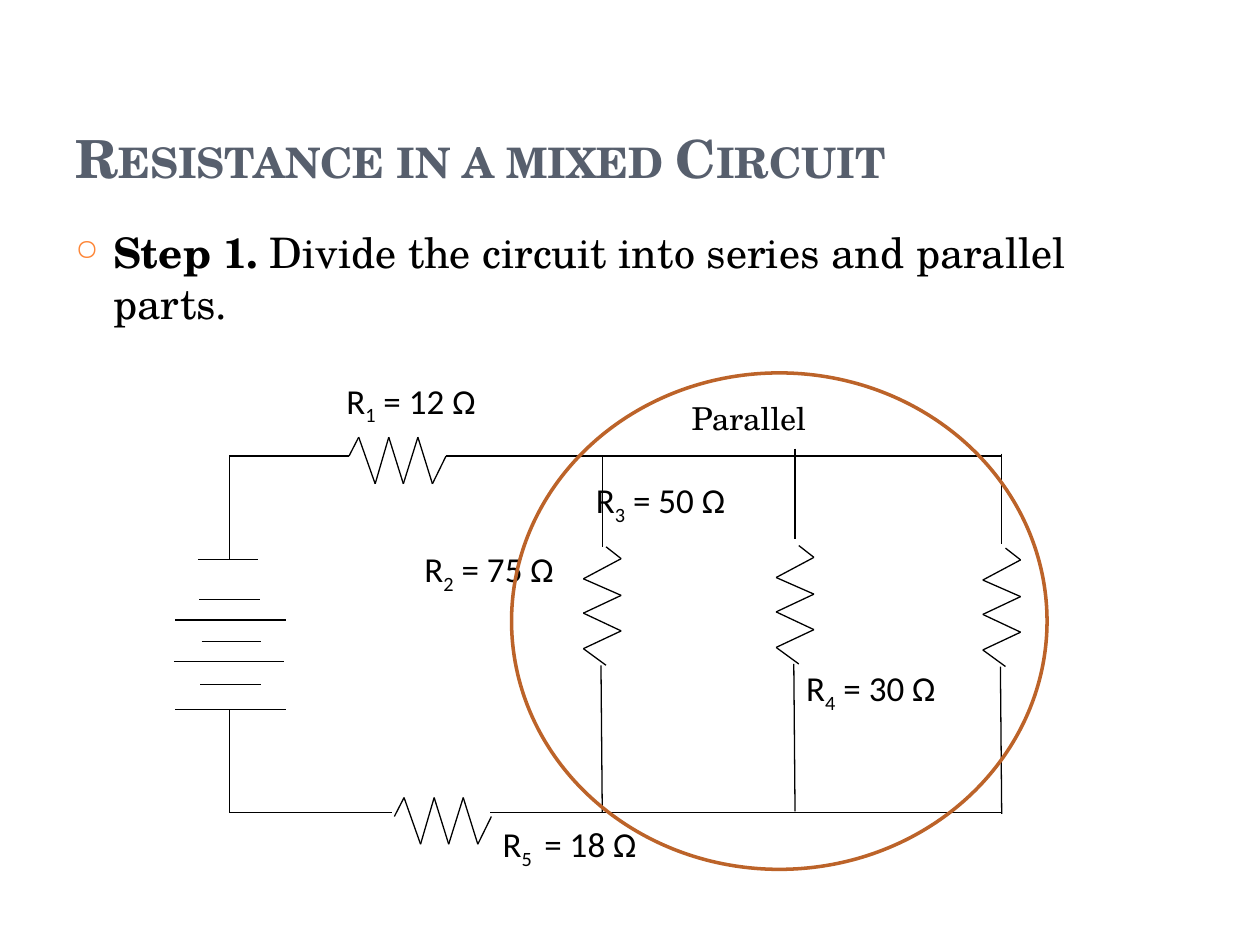
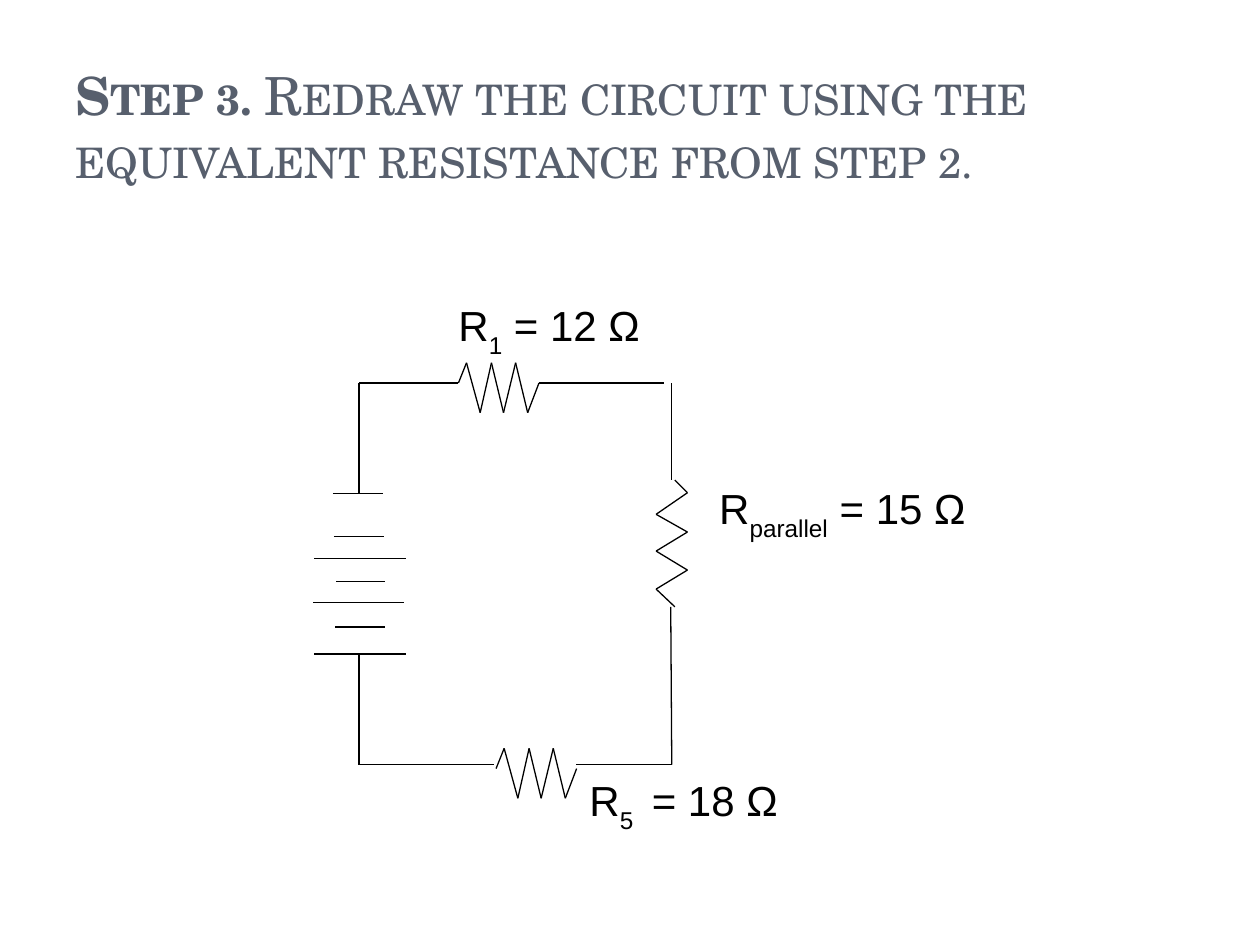
from itertools import pairwise

from lxml.etree import SubElement
from pptx import Presentation
from pptx.dml.color import RGBColor
from pptx.enum.shapes import MSO_CONNECTOR, MSO_SHAPE
from pptx.enum.text import MSO_ANCHOR, MSO_AUTO_SIZE, PP_ALIGN
from pptx.oxml.ns import qn
from pptx.util import Pt

PX = 9144  # 100 px to the inch
BLACK = RGBColor(0x00, 0x00, 0x00)
WHITE = RGBColor(0xFF, 0xFF, 0xFF)
SLATE = RGBColor(0x57, 0x5F, 0x6D)
RUST = RGBColor(0xBC, 0x63, 0x29)
BULLET_ORANGE = "FE8637"
SERIF = "TeX Gyre Schola"
TITLE_BOX = (50, 30, 817, 125)

# Circuit lengths are local to the top left corner, before each slide's scale.
# A branch is (x, top of its wire, top of its resistor).
# A label is (box, subscript, value).
MIXED = {
    "title": [("Resistance in a mixed Circuit", {"bold": True})],
    "origin": (182, 362),
    "scale": (1, 1),
    "top_end": 613,
    "bottom_end": 613,
    "branches": [(296, 0, 72), (449, -6, 71), (613, -2, 73)],
    "label_format": {"size": 20, "font": "Calibri", "after": 10},
    "subscript": -25,
    "labels": [
        ((389, 648, 206, 60), "5 ", " = 18 Ω"),
        ((630, 524, 193, 60), "4", " = 30 Ω"),
        ((463, 375, 222, 60), "3", " = 50 Ω"),
        ((327, 430, 200, 60), "2", " = 75 Ω"),
        ((265, 296, 216, 60), "1", " = 12 Ω"),
    ],
}
REDRAWN = {
    "title": [
        ("Step 3. ", {"bold": True}),
        ("Redraw the circuit using the equivalent resistance from step 2.", {}),
    ],
    "origin": (285, 304),
    "scale": (0.83, 1.07),
    "top_end": 292,
    "bottom_end": 299,
    "branches": [(299, 0, 72)],
    "label_format": {"size": 24, "font": "Arial"},
    "subscript": -30,
    "labels": [
        ((458, 610, 172, 64), "5 ", " = 18 Ω"),
        ((561, 378, 230, 64), "parallel", " = 15 Ω"),
        ((354, 233, 181, 64), "1", " = 12 Ω"),
    ],
}
STEP_1 = [
    ("Step 1.", {"bold": True}),
    (" Divide the circuit into series and parallel parts.", {}),
]
STEP_BOX = (50, 175, 817, 533)
PARALLEL_RING = (406, 296, 425, 394)
PARALLEL_BOX = (539, 312, 315, 40)

BOTTOM = 283
BATTERY_TOP, BATTERY_BOTTOM = 82, 201
PLATES = [  # left, right, y
    (-25, 23, BATTERY_TOP), (-24, 24, 114), (-22, 25, 147), (-23, 25, 181),
    (-43, 45, 130), (-44, 43, 163), (-43, 45, BATTERY_BOTTOM),
]
ZIGZAG = (0, 0.1, 0.27, 0.41, 0.56, 0.71, 0.86, 1)
ACROSS, DOWN = 77, 94  # resistor lengths


def emu(*lengths):
    return [round(length * PX) for length in lengths]


def write(frame, runs, size=18, font=SERIF, color=BLACK, small_caps=False,
          before=0, after=0, anchor=MSO_ANCHOR.TOP):
    """Fill the frame with one left-aligned paragraph of (text, format) runs."""
    frame.word_wrap = True
    frame.auto_size = MSO_AUTO_SIZE.NONE
    frame.vertical_anchor = anchor
    paragraph = frame.paragraphs[0]
    paragraph.alignment = PP_ALIGN.LEFT
    paragraph.space_before, paragraph.space_after = Pt(before), Pt(after)
    for text, style in runs:
        run = paragraph.add_run()
        run.text = text
        run.font.size, run.font.name = Pt(size), font
        run.font.color.rgb = color
        run.font.bold = style.get("bold", False)
        properties = run._r.get_or_add_rPr()
        if small_caps:
            properties.set("cap", "small")
        if "baseline" in style:
            properties.set("baseline", str(style["baseline"] * 1000))
    return paragraph


def add_bullet(paragraph):
    properties = paragraph._p.get_or_add_pPr()
    properties.set("marL", str(30 * PX))
    properties.set("indent", str(-30 * PX))
    color = SubElement(properties, qn("a:buClr"))
    SubElement(color, qn("a:srgbClr"), val=BULLET_ORANGE)
    SubElement(properties, qn("a:buSzPct"), val="70000")
    SubElement(properties, qn("a:buChar"), char="○")


def add_outlined(slide, kind, box, color, width):
    shape = slide.shapes.add_shape(kind, *emu(*box))
    shape.shadow.inherit = False
    shape.line.color.rgb = color
    shape.line.width = Pt(width)
    return shape


def add_wire(slide, circuit, *points):
    """Join local points with straight lines, scaled and moved into place."""
    placed = [
        emu(*(start + scale * local for start, scale, local
              in zip(circuit["origin"], circuit["scale"], point)))
        for point in points
    ]
    for begin, end in pairwise(placed):
        line = slide.shapes.add_connector(MSO_CONNECTOR.STRAIGHT, *begin, *end)
        line.line.color.rgb = BLACK
        line.line.width = Pt(0.75)
        SubElement(line._element.spPr, qn("a:effectLst"))


def resistor(x, y, vertical=False):
    """Return the corner points of a zigzag that starts at x, y."""
    length, first, second = (DOWN, 12, -18) if vertical else (ACROSS, -15, 22)
    swings = [0, *[first, second] * 3, 0]
    steps = [(length * part, swing) for part, swing in zip(ZIGZAG, swings)]
    if vertical:
        return [(x + swing, y + along) for along, swing in steps]
    return [(x + along, y + swing) for along, swing in steps]


def draw_circuit(slide, circuit):
    wires = [
        [(0, 0), (95, 0)],
        resistor(95, 0),
        [(95 + ACROSS, 0), (circuit["top_end"], 0)],
        [(circuit["bottom_end"], BOTTOM), (207, BOTTOM)],
        [(129, BOTTOM), (0, BOTTOM)],
        resistor(131, BOTTOM + 3),
        [(0, 0), (0, BATTERY_TOP)],
        [(0, BATTERY_BOTTOM), (0, BOTTOM)],
    ]
    wires += [[(left, y), (right, y)] for left, right, y in PLATES]
    for x, wire_top, resistor_top in circuit["branches"]:
        resistor_end = resistor_top + DOWN
        wires += [
            [(x, wire_top), (x, wire_top + 72)],
            resistor(x + 3, resistor_top, vertical=True),
            [(x - 1, resistor_end), (x, resistor_end + 117)],
        ]
    for points in wires:
        add_wire(slide, circuit, *points)


def add_circuit_slide(deck, circuit):
    slide = deck.slides.add_slide(deck.slide_layouts[5])
    title = slide.shapes.title
    title.left, title.top, title.width, title.height = emu(*TITLE_BOX)
    write(title.text_frame, circuit["title"], size=30, color=SLATE,
          small_caps=True, anchor=MSO_ANCHOR.BOTTOM)
    for box, subscript, value in circuit["labels"]:
        label = add_outlined(slide, MSO_SHAPE.RECTANGLE, box, WHITE, 0.75)
        label.fill.solid()
        label.fill.fore_color.rgb = WHITE
        runs = [("R", {}), (subscript, {"baseline": circuit["subscript"]}),
                (value, {})]
        write(label.text_frame, runs, **circuit["label_format"])
    draw_circuit(slide, circuit)
    return slide


def main():
    deck = Presentation()
    deck.slide_width, deck.slide_height = emu(1000, 750)

    mixed = add_circuit_slide(deck, MIXED)
    step = mixed.shapes.add_textbox(*emu(*STEP_BOX))
    add_bullet(write(step.text_frame, STEP_1, size=24, before=6))
    ring = add_outlined(mixed, MSO_SHAPE.OVAL, PARALLEL_RING, RUST, 2)
    ring.fill.background()
    parallel = mixed.shapes.add_textbox(*emu(*PARALLEL_BOX))
    write(parallel.text_frame, [("Parallel", {})])

    add_circuit_slide(deck, REDRAWN)
    deck.save("out.pptx")


if __name__ == "__main__":
    main()
